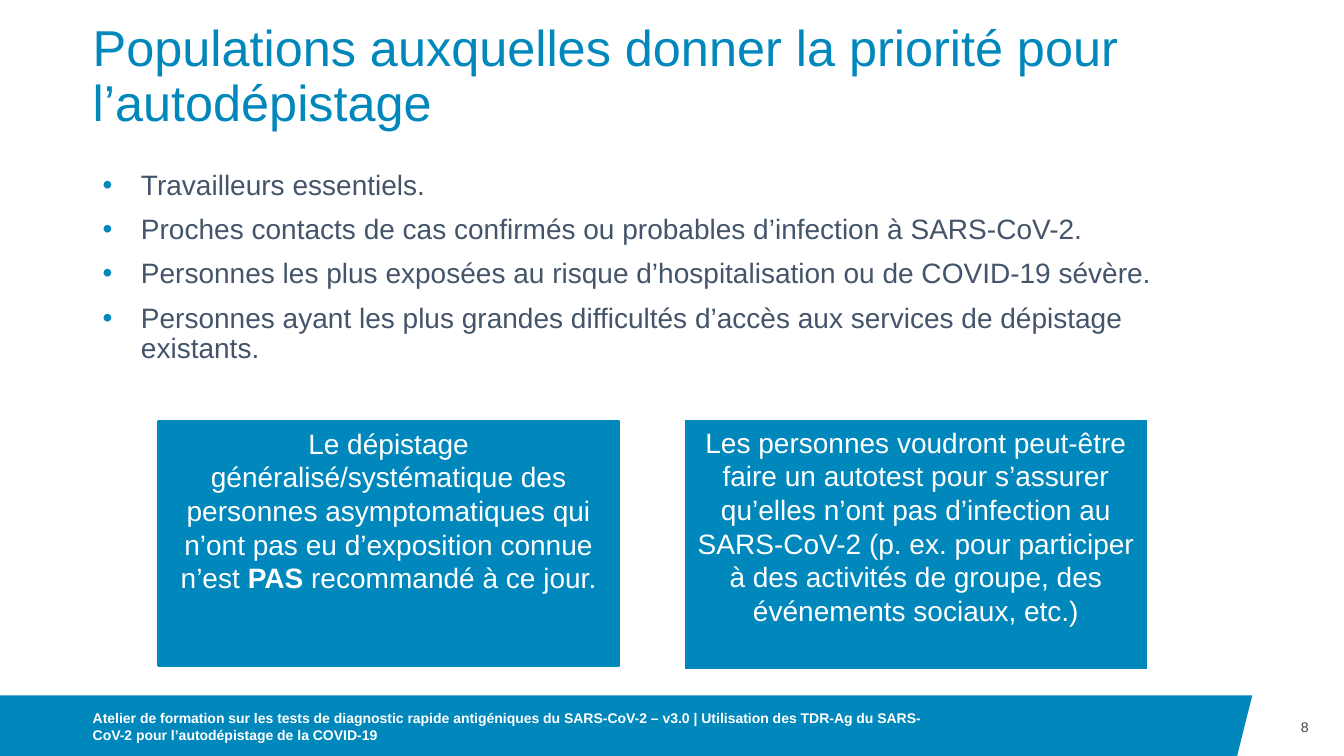
from pptx import Presentation
from pptx.dml.color import RGBColor
from pptx.enum.shapes import MSO_SHAPE
from pptx.enum.text import MSO_ANCHOR, PP_ALIGN
from pptx.oxml import parse_xml
from pptx.oxml.ns import nsdecls
from pptx.util import Inches, Pt

RECT = MSO_SHAPE.RECTANGLE
TOP, MIDDLE, BOTTOM = MSO_ANCHOR.TOP, MSO_ANCHOR.MIDDLE, MSO_ANCHOR.BOTTOM
LEFT, CENTER, RIGHT = PP_ALIGN.LEFT, PP_ALIGN.CENTER, PP_ALIGN.RIGHT

# Content
BLUE, SLATE, GREY, WHITE = "0087BC", "44546A", "424242", "FFFFFF"
TITLE = "Populations auxquelles donner la priorité pour l’autodépistage"
PRIORITY_GROUPS = [
    "Travailleurs essentiels.",
    "Proches contacts de cas confirmés ou probables d’infection à SARS-CoV-2.",
    "Personnes les plus exposées au risque d’hospitalisation ou de COVID-19 sévère.",
    "Personnes ayant les plus grandes difficultés d’accès aux services de dépistage existants.",
]
# Each callout: box, line width, runs as (text, bold)
CALLOUTS = [
    ((1.57, 4.18, 4.57, 2.42), 2, [
        ("Le dépistage généralisé/systématique des personnes asymptomatiques qui "
         "n’ont pas eu d’exposition connue n’est ", False),
        ("PAS", True),
        (" recommandé à ce jour.", False)]),
    ((6.8, 4.17, 4.57, 2.46), 0.75, [
        ("Les personnes voudront peut-être faire un autotest pour s’assurer "
         "qu’elles n’ont pas d’infection au SARS-CoV-2 (p. ex. pour participer à "
         "des activités de groupe, des événements sociaux, etc.)", False)]),
]
FOOTER = ("Atelier de formation sur les tests de diagnostic rapide antigéniques du "
          "SARS-CoV-2 – v3.0 | Utilisation des TDR-Ag du SARS-CoV-2 pour "
          "l’autodépistage de la COVID-19")
PAGE = "8"
BAND = [(0, 6.9), (12.42, 6.9), (12.27, 7.5), (0, 7.5)]
MARGIN = 0.92
PADDED = (0.1, 0.05)


def rgb(value):
    return RGBColor.from_string(value)


def paint(sp, line_width=None):
    sp.shadow.inherit = False
    sp.fill.solid()
    sp.fill.fore_color.rgb = rgb(BLUE)
    if line_width is None:
        sp.line.fill.background()
    else:
        sp.line.color.rgb = rgb(BLUE)
        sp.line.width = Pt(line_width)


def write(sp, paragraphs, size, color, anchor=TOP, align=LEFT, inset=(0, 0), **spacing):
    """Fill a shape with paragraphs, each a list of (text, bold) runs."""
    tf = sp.text_frame
    dx, dy = map(Inches, inset)
    frame = {"word_wrap": True, "vertical_anchor": anchor, "margin_left": dx,
             "margin_right": dx, "margin_top": dy, "margin_bottom": dy}
    for name, value in frame.items():
        setattr(tf, name, value)
    for i, runs in enumerate(paragraphs):
        p = tf.add_paragraph() if i else tf.paragraphs[0]
        for name, value in {"alignment": align, **spacing}.items():
            setattr(p, name, value)
        for text, bold in runs:
            r = p.add_run()
            r.text = text
            font = {"name": "Arial", "size": Pt(size), "bold": bold}
            for name, value in font.items():
                setattr(r.font, name, value)
            r.font.color.rgb = rgb(color)
    return tf


def add_bullet(p, indent):
    pPr = p._p.get_or_add_pPr()
    pPr.set("marL", str(Inches(indent)))
    pPr.set("indent", str(-Inches(indent)))
    for xml in (f'<a:buClr {nsdecls("a")}><a:srgbClr val="{BLUE}"/></a:buClr>',
                f'<a:buFont {nsdecls("a")} typeface="Arial"/>',
                f'<a:buChar {nsdecls("a")} char="•"/>'):
        pPr.append(parse_xml(xml))


def main():
    prs = Presentation()
    prs.slide_width, prs.slide_height = Inches(13.33), Inches(7.5)
    s = prs.slides.add_slide(prs.slide_layouts[6])

    def textbox(*box):
        return s.shapes.add_textbox(*map(Inches, box))

    # Footer band
    points = [(Inches(x), Inches(y)) for x, y in BAND]
    fb = s.shapes.build_freeform(*points[0])
    fb.add_line_segments(points[1:], close=True)
    paint(fb.convert_to_shape())

    # Title and priority groups
    write(textbox(MARGIN, 0.28, 11.5, 1.03), [[(TITLE, False)]], 36, BLUE,
          BOTTOM, line_spacing=0.9)
    tf = write(textbox(MARGIN, 1.65, 11.5, 2.3), [[(t, False)] for t in PRIORITY_GROUPS],
               20, SLATE, inset=PADDED, line_spacing=0.9, space_before=Pt(10))
    for p in tf.paragraphs:
        add_bullet(p, 0.38)

    # Callouts
    for box, line_width, runs in CALLOUTS:
        sp = s.shapes.add_shape(RECT, *map(Inches, box))
        paint(sp, line_width)
        write(sp, [runs], 20, WHITE, align=CENTER, inset=PADDED)

    # Footer text and page number
    write(textbox(MARGIN, 6.93, 8.36, 0.55), [[(FOOTER, True)]], 10, WHITE, MIDDLE)
    write(textbox(12.42, 6.9, 0.56, 0.63), [[(PAGE, False)]], 10, GREY, MIDDLE, RIGHT)

    prs.save("out.pptx")


if __name__ == "__main__":
    main()
